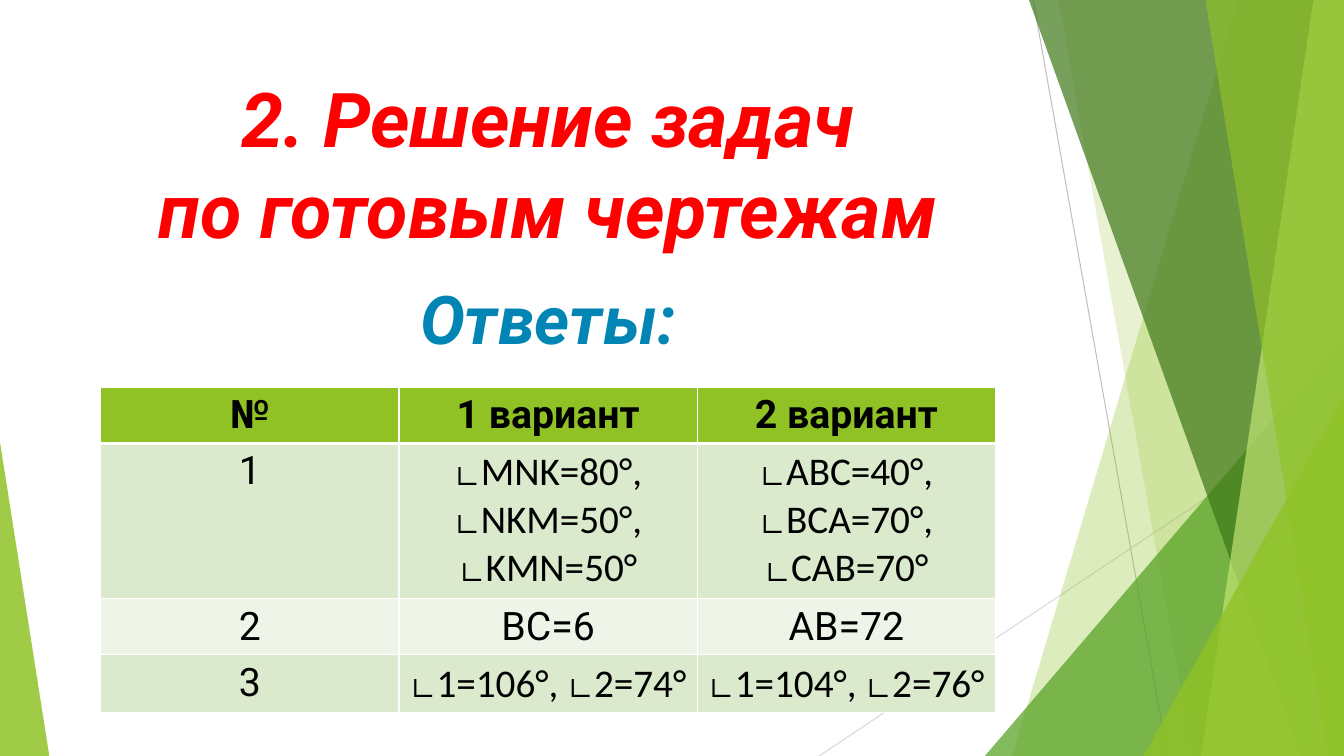
import dataclasses

import lxml.etree
import pptx
import pptx.dml.color
import pptx.enum.shapes
import pptx.enum.text
import pptx.oxml.ns
import pptx.util

PX = 9525
WIDTH, HEIGHT = 1280, 720


@dataclasses.dataclass(frozen=True)
class Theme:
    lime: str = "90C226"
    green: str = "54A021"
    dark_green: str = "3F7819"
    pale_lime: str = "C0E474"
    title: str = "FF0000"
    subtitle: str = "0085B4"
    ink: str = "000000"
    white: str = "FFFFFF"
    band_dark: str = "DBE9CD"
    band_light: str = "EEF4E8"
    line_dark: str = "BFBFBF"
    line_light: str = "D9D9D9"
    font: str = "Roboto"
    cell_font: str = "Calibri"
    title_size: int = 54
    subtitle_size: int = 48
    cell_size: int = 28


THEME = Theme()

# top-left x, bottom-left x, colour, opacity; each facet runs to the right edge
FACETS_BACK = [(1179, 964, THEME.lime, 30), (1008, 1136, THEME.lime, 20)]
FACETS_FRONT = [
    (980, 1239, THEME.dark_green, 70),
    (1251, 1144, THEME.pale_lime, 70),
    (1148, 1265, THEME.lime, 65),
]

ROWS = [
    ["№", "1 вариант", "2 вариант"],
    ["1", "∟MNK=80°, ∟NKM=50°, ∟KMN=50°", "∟АВС=40°, ∟ВСА=70°,\n∟САВ=70°"],
    ["2", "ВС=6", "АВ=72"],
    ["3", "∟1=106°, ∟2=74°", "∟1=104°, ∟2=76°"],
]
ROW_HEIGHTS = [53, 148, 53, 53]
COLUMN_WIDTH = 284


def rgb(color):
    return pptx.dml.color.RGBColor.from_string(color)


def sub(parent, tag, **attrs):
    return lxml.etree.SubElement(parent, pptx.oxml.ns.qn(tag), **attrs)


def set_attrs(obj, values):
    for name, value in values.items():
        setattr(obj, name, value)


def place(sp, left, top, width, height):
    set_attrs(sp, {"left": left * PX, "top": top * PX,
                   "width": width * PX, "height": height * PX})


def write(tf, text, size, color, **font):
    """Fill a text frame with centred text; font holds further font values."""
    tf.text = text
    for p in tf.paragraphs:
        p.alignment = pptx.enum.text.PP_ALIGN.CENTER
        for r in p.runs:
            set_attrs(r.font, {"size": pptx.util.Pt(size), **font})
            r.font.color.rgb = rgb(color)


def paint(sp, color, opacity):
    sp.shadow.inherit = False
    sp.line.fill.background()
    sp.fill.solid()
    sp.fill.fore_color.rgb = rgb(color)
    clr = sp._element.spPr.find(".//" + pptx.oxml.ns.qn("a:srgbClr"))
    sub(clr, "a:alpha", val=str(opacity * 1000))


def add_line(s, x1, y1, x2, y2, color):
    line = s.shapes.add_connector(
        pptx.enum.shapes.MSO_CONNECTOR.STRAIGHT, x1 * PX, y1 * PX, x2 * PX, y2 * PX)
    line.line.color.rgb = rgb(color)
    line.line.width = pptx.util.Pt(0.75)
    sub(line._element.spPr, "a:effectLst")


def add_facet(s, top_x, bottom_x, color, opacity):
    builder = s.shapes.build_freeform(top_x, 0, scale=PX)
    builder.add_line_segments([(WIDTH, 0), (WIDTH, HEIGHT), (bottom_x, HEIGHT)])
    paint(builder.convert_to_shape(), color, opacity)


def add_triangle(s, left, top, width, apex, color, opacity):
    """Add a triangle standing on the slide's bottom edge."""
    sp = s.shapes.add_shape(
        pptx.enum.shapes.MSO_SHAPE.ISOSCELES_TRIANGLE,
        left * PX, top * PX, width * PX, (HEIGHT - top) * PX)
    sp.adjustments[0] = apex
    paint(sp, color, opacity)


def add_background(s):
    add_line(s, 984, 0, 1112, HEIGHT, THEME.line_dark)
    add_line(s, WIDTH, 387, 780, HEIGHT, THEME.line_light)
    for facet in FACETS_BACK:
        add_facet(s, *facet)
    add_triangle(s, 938, 320, 342, 1, THEME.green, 72)
    for facet in FACETS_FRONT:
        add_facet(s, *facet)
    add_triangle(s, 1089, 377, 191, 1, THEME.lime, 80)
    add_triangle(s, 0, 421, 47, 0, THEME.lime, 85)


def add_headings(s):
    frame = {"word_wrap": True,
             "auto_size": pptx.enum.text.MSO_AUTO_SIZE.NONE,
             "vertical_anchor": pptx.enum.text.MSO_ANCHOR.TOP}
    font = {"name": THEME.font, "bold": True, "italic": True}
    title = s.shapes.title
    place(title, 71, 64, 902, 138)
    set_attrs(title.text_frame, frame)
    # the vertical tab keeps both lines in one paragraph
    title.text_frame.paragraphs[0].text = ""
    write(title.text_frame, "2. Решение задач\vпо готовым чертежам",
          THEME.title_size, THEME.title, **font)

    answers = s.shapes.add_textbox(71 * PX, 259 * PX, 902 * PX, 90 * PX)
    set_attrs(answers.text_frame, frame)
    write(answers.text_frame, "Ответы:", THEME.subtitle_size, THEME.subtitle, **font)
    answers.text_frame.paragraphs[0].space_before = pptx.util.Pt(10)


def set_borders(cell, top, bottom):
    tc_pr = cell._tc.get_or_add_tcPr()
    for side, width in (("L", 1), ("R", 1), ("T", top), ("B", bottom)):
        ln = sub(tc_pr, "a:ln" + side, w=str(pptx.util.Pt(width)))
        sub(sub(ln, "a:solidFill"), "a:srgbClr", val=THEME.white)


def add_answer_table(s):
    table = s.shapes.add_table(
        len(ROWS), len(ROWS[0]), 96 * PX, 369 * PX,
        COLUMN_WIDTH * len(ROWS[0]) * PX, sum(ROW_HEIGHTS) * PX).table
    for column in table.columns:
        column.width = COLUMN_WIDTH * PX
    fills = [THEME.lime, THEME.band_dark, THEME.band_light, THEME.band_dark]
    for i, texts in enumerate(ROWS):
        table.rows[i].height = ROW_HEIGHTS[i] * PX
        for j, text in enumerate(texts):
            cell = table.cell(i, j)
            name = THEME.cell_font if "∟" in text else THEME.font
            write(cell.text_frame, text, THEME.cell_size, THEME.ink,
                  name=name, bold=i == 0)
            set_borders(cell, top=3 if i == 1 else 1, bottom=3 if i == 0 else 1)
            cell.fill.solid()
            cell.fill.fore_color.rgb = rgb(fills[i])


def main():
    prs = pptx.Presentation()
    set_attrs(prs, {"slide_width": WIDTH * PX, "slide_height": HEIGHT * PX})
    s = prs.slides.add_slide(prs.slide_layouts.get_by_name("Title Only"))
    add_background(s)
    add_headings(s)
    add_answer_table(s)
    prs.save("out.pptx")


if __name__ == "__main__":
    main()
